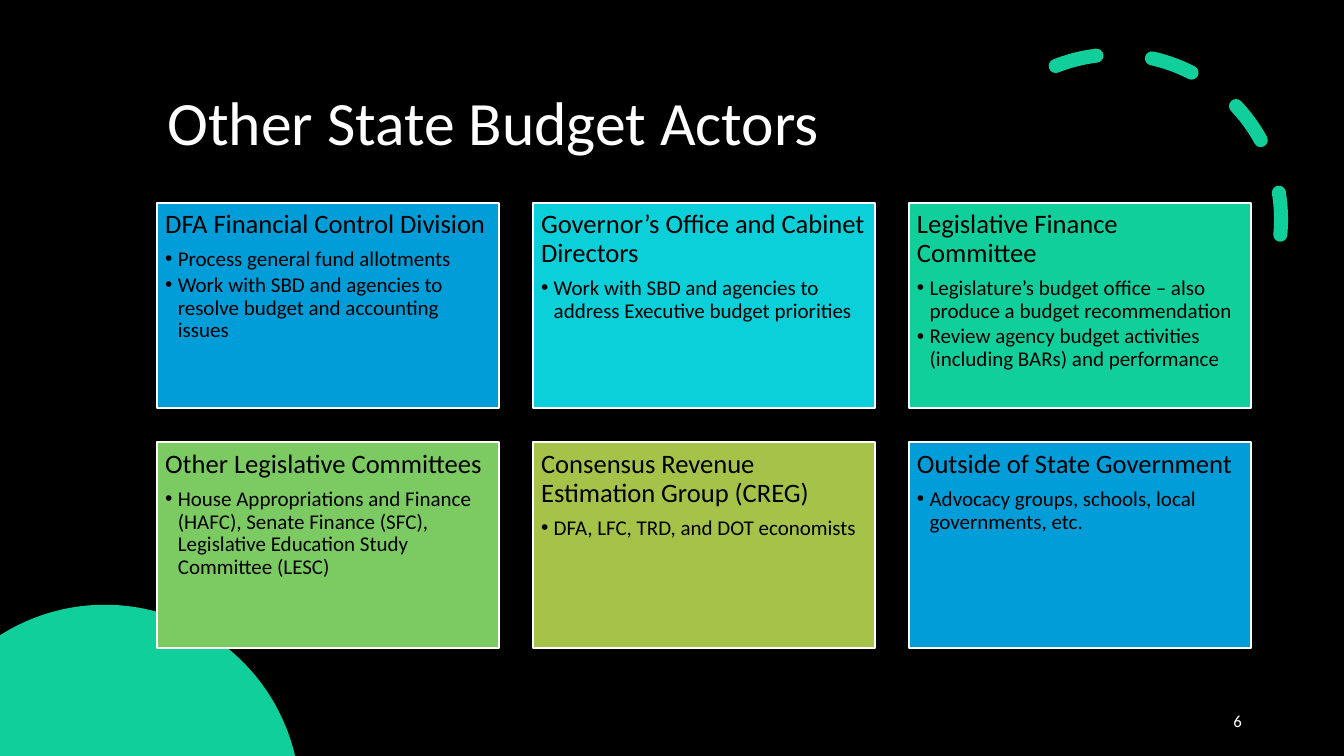
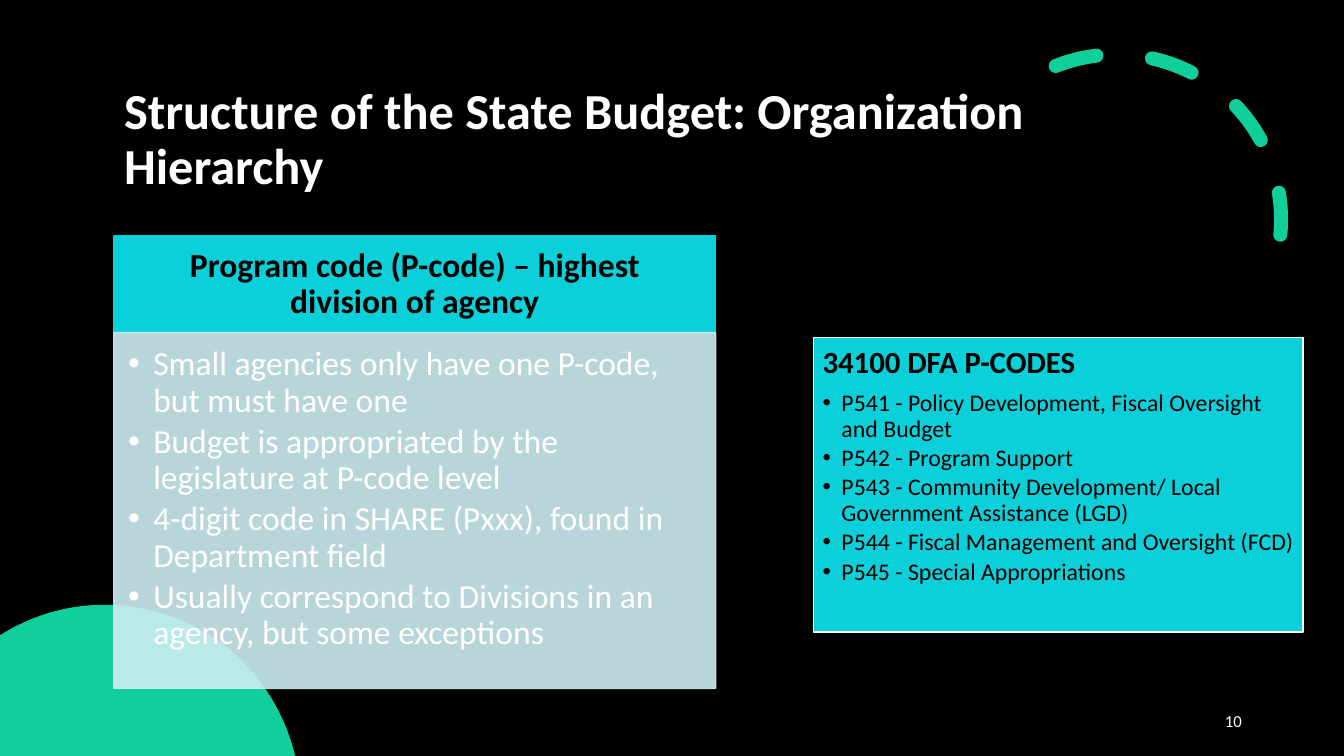
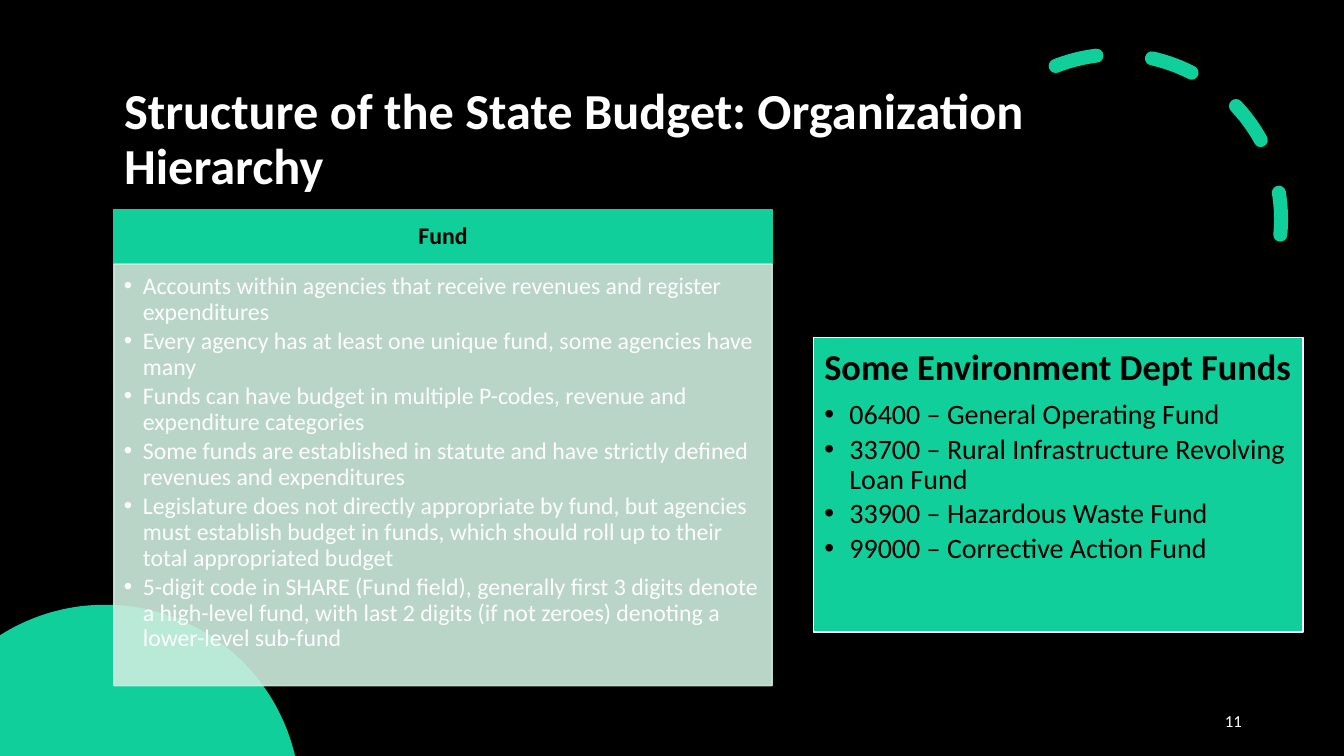
from dataclasses import dataclass
from math import acos, asin, cos, sin
from typing import Any

from lxml.etree import SubElement
from pptx import Presentation
from pptx.dml.color import RGBColor
from pptx.enum.dml import MSO_LINE_DASH_STYLE as Dash
from pptx.enum.shapes import MSO_SHAPE as Preset
from pptx.enum.text import MSO_ANCHOR as Anchor, MSO_AUTO_SIZE as AutoSize, PP_ALIGN as Align
from pptx.oxml.ns import qn
from pptx.util import Pt

COLOURS = {
    "black": "000000",
    "white": "FFFFFF",
    "blue": "009DD9",
    "cyan": "0BD0D9",
    "mint": "10CF9B",
    "green": "7CCA62",
    "olive": "A5C249",
    "pale cyan": "CCEEF1",
    "pale mint": "CCEDDE",
}
FONT = "Calibri"
WIDTH, HEIGHT = 960, 540
BULLET_INDENTS = {15: 9, 17: 13.5, 20: 18, 24: 18}
TITLE_ONLY = 5


@dataclass(frozen=True)
class Area:
    left: float
    top: float
    width: float
    height: float

    def lengths(self) -> tuple[Pt, Pt, Pt, Pt]:
        return Pt(self.left), Pt(self.top), Pt(self.width), Pt(self.height)


@dataclass(frozen=True)
class TitleStyle:
    area: Area
    size: float
    bold: bool


@dataclass(frozen=True)
class Card:
    """A filled box with a heading and bullets below it."""
    heading: str
    bullets: tuple[str, ...]
    colour: str
    heading_size: float
    bullet_size: float
    bold: bool = False
    line_width: float = 1


@dataclass(frozen=True)
class Panel:
    """A header band above a translucent box of bullets."""
    heading: str
    bullets: tuple[str, ...]
    header: Area
    body_height: float
    size: float
    colour: str
    body_colour: str


@dataclass(frozen=True)
class HierarchySlide:
    number: int
    panel: Panel
    example: Card


GRID_TITLE = TitleStyle(Area(112.3, 37.4, 781.2, 104.4), 44, False)
HIERARCHY_TITLE = TitleStyle(Area(81.4, 48.2, 791.3, 104.4), 36, True)
FIRST_CARD = Area(112.3, 144.7, 244.1, 146.9)
CARD_GAP = 24.4
GRID_COLUMNS = 3
EXAMPLE_AREA = Area(581, 241.2, 349.9, 210.2)
NUMBER_AREA = Area(678.2, 500.5, 216, 28.75)
ARC_AREA = Area(679.7, 38.9, 235.4, 235.4)

ACTORS = [
    ("blue", "DFA Financial Control Division",
     ("Process general fund allotments",
      "Work with SBD and agencies to resolve budget and accounting issues")),
    ("cyan", "Governor’s Office and Cabinet Directors",
     ("Work with SBD and agencies to address Executive budget priorities",)),
    ("mint", "Legislative Finance Committee",
     ("Legislature’s budget office – also produce a budget recommendation",
      "Review agency budget activities (including BARs) and performance")),
    ("green", "Other Legislative Committees",
     ("House Appropriations and Finance (HAFC), Senate Finance (SFC), "
      "Legislative Education Study Committee (LESC)",)),
    ("olive", "Consensus Revenue Estimation Group (CREG)",
     ("DFA, LFC, TRD, and DOT economists",)),
    ("blue", "Outside of State Government",
     ("Advocacy groups, schools, local governments, etc.",)),
]

HIERARCHY_SLIDES = [
    HierarchySlide(
        10,
        Panel(
            "Program code (P-code) – highest division of agency",
            ("Small agencies only have one P-code, but must have one",
             "Budget is appropriated by the legislature at P-code level",
             "4-digit code in SHARE (Pxxx), found in Department field",
             "Usually correspond to Divisions in an agency, but some exceptions"),
            Area(81.4, 168.5, 429.8, 69.1), 254.2, 24, "cyan", "pale cyan"),
        Card(
            "34100 DFA P-CODES",
            ("P541 - Policy Development, Fiscal Oversight and Budget",
             "P542 - Program Support",
             "P543 - Community Development/ Local Government Assistance (LGD)",
             "P544 - Fiscal Management and Oversight (FCD)",
             "P545 - Special Appropriations"),
            "cyan", 22, 17, bold=True)),
    HierarchySlide(
        11,
        Panel(
            "Fund",
            ("Accounts within agencies that receive revenues and register expenditures",
             "Every agency has at least one unique fund, some agencies have many",
             "Funds can have budget in multiple P-codes, revenue and expenditure categories",
             "Some funds are established in statute and have strictly defined "
             "revenues and expenditures",
             "Legislature does not directly appropriate by fund, but agencies must establish "
             "budget in funds, which should roll up to their total appropriated budget",
             "5-digit code in SHARE (Fund field), generally first 3 digits denote a high-level "
             "fund, with last 2 digits (if not zeroes) denoting a lower-level sub-fund"),
            Area(81.4, 149.8, 470.2, 38.9), 301, 17, "mint", "pale mint"),
        Card(
            "Some Environment Dept Funds",
            ("06400 – General Operating Fund",
             "33700 – Rural Infrastructure Revolving Loan Fund",
             "33900 – Hazardous Waste Fund",
             "99000 – Corrective Action Fund"),
            "mint", 26, 20, bold=True)),
]


def rgb(name: str) -> RGBColor:
    return RGBColor.from_string(COLOURS[name])


def set_values(target: Any, values: dict[str, Any]) -> None:
    for name, value in values.items():
        setattr(target, name, value)


def set_frame(frame: Any, anchor: Anchor, insets: tuple[float, ...] = (7.2, 3.6, 7.2, 3.6)) -> None:
    """Insets run left, top, right, bottom."""
    sides = ("margin_left", "margin_top", "margin_right", "margin_bottom")
    set_values(frame, {"word_wrap": True, "auto_size": AutoSize.NONE, "vertical_anchor": anchor})
    set_values(frame, {side: Pt(round(inset, 2)) for side, inset in zip(sides, insets)})


def write(paragraph: Any, text: str, size: float, colour: str, bold: bool = False,
          align: Align = Align.LEFT, after: float = 0, spacing: float = 0.9) -> None:
    """Fill a paragraph; after is the space below as a share of the text size."""
    run = paragraph.add_run()
    run.text = text
    set_values(run.font, {"name": FONT, "size": Pt(size), "bold": bold})
    run.font.color.rgb = rgb(colour)
    set_values(paragraph, {"alignment": align, "line_spacing": spacing,
                           "space_before": Pt(0), "space_after": Pt(round(size * after, 2))})


def write_bullets(frame: Any, bullets: tuple[str, ...], size: float, colour: str) -> None:
    for text in bullets:
        last = frame.paragraphs[-1]
        paragraph = frame.add_paragraph() if last.runs else last
        write(paragraph, text, size, colour, after=0.15)
        paragraph.level = 1
        properties = paragraph._p.get_or_add_pPr()
        indent = Pt(BULLET_INDENTS[size])
        properties.set("marL", str(indent))
        properties.set("indent", str(-indent))
        SubElement(properties, qn("a:buFont"), typeface="Arial")
        SubElement(properties, qn("a:buChar"), char="•")


def add_box(slide: Any, area: Area, fill: str, line: str, line_width: float = 1) -> Any:
    shape = slide.shapes.add_shape(Preset.RECTANGLE, *area.lengths())
    shape.shadow.inherit = False
    shape.fill.solid()
    shape.fill.fore_color.rgb = rgb(fill)
    shape.line.color.rgb = rgb(line)
    shape.line.width = Pt(line_width)
    return shape


def add_card(slide: Any, area: Area, card: Card) -> None:
    frame = add_box(slide, area, card.colour, "white", card.line_width).text_frame
    set_frame(frame, Anchor.TOP, (card.heading_size * 0.3,) * 4)
    write(frame.paragraphs[0], card.heading, card.heading_size, "black", card.bold, after=0.35)
    write_bullets(frame, card.bullets, card.bullet_size, "black")


def add_panel(slide: Any, panel: Panel) -> None:
    header, size = panel.header, panel.size
    frame = add_box(slide, header, panel.colour, panel.colour).text_frame
    set_frame(frame, Anchor.MIDDLE, (size * 0.56, size * 0.32) * 2)
    write(frame.paragraphs[0], panel.heading, size, "black", True, Align.CENTER)

    body_area = Area(header.left, header.top + header.height, header.width, panel.body_height)
    body = add_box(slide, body_area, panel.body_colour, panel.body_colour)
    for colour in list(body.element.spPr.iter(qn("a:srgbClr"))):
        SubElement(colour, qn("a:alpha"), val="90000")
    set_frame(body.text_frame, Anchor.TOP, (size * 0.42, size * 0.42, size * 0.56, size * 0.64))
    write_bullets(body.text_frame, panel.bullets, size, "white")


def add_dashed_arc(slide: Any) -> None:
    arc = slide.shapes.add_shape(Preset.ARC, *ARC_AREA.lengths())
    arc.shadow.inherit = False
    arc.adjustments[0], arc.adjustments[1] = 144.42, 0
    arc.rotation = 66.1
    arc.element.spPr.xfrm.set("flipH", "1")
    arc.fill.background()
    arc.line.color.rgb = rgb("mint")
    set_values(arc.line, {"width": Pt(10), "dash_style": Dash.DASH})
    arc.element.spPr.find(qn("a:ln")).set("cap", "rnd")


def add_corner_disc(slide: Any) -> None:
    """Draw the part of a disc that lies inside the bottom left corner."""
    centre_x, centre_y, radius, steps = 74.9, 571.5, 139.5, 60
    start = asin(-centre_x / radius)
    end = acos((centre_y - HEIGHT) / radius)
    angles = [start + (end - start) * step / steps for step in range(steps + 1)]
    points = [(Pt(centre_x + radius * sin(angle)), Pt(centre_y - radius * cos(angle)))
              for angle in angles]
    builder = slide.shapes.build_freeform(Pt(0), Pt(HEIGHT))
    builder.add_line_segments(points, close=True)
    disc = builder.convert_to_shape()
    disc.shadow.inherit = False
    disc.fill.solid()
    disc.fill.fore_color.rgb = rgb("mint")
    disc.line.fill.background()


def start_slide(presentation: Any, title: str, style: TitleStyle, number: int) -> Any:
    """Add a slide with everything that all slides share."""
    slide = presentation.slides.add_slide(presentation.slide_layouts[TITLE_ONLY])
    placeholder = slide.shapes.title
    set_values(placeholder, dict(zip(("left", "top", "width", "height"), style.area.lengths())))
    set_frame(placeholder.text_frame, Anchor.MIDDLE)
    write(placeholder.text_frame.paragraphs[0], title, style.size, "white", style.bold)
    add_dashed_arc(slide)
    add_corner_disc(slide)
    frame = slide.shapes.add_textbox(*NUMBER_AREA.lengths()).text_frame
    set_frame(frame, Anchor.MIDDLE)
    write(frame.paragraphs[0], str(number), 12, "white", align=Align.RIGHT, spacing=1.0)
    return slide


def build_actors_slide(presentation: Any) -> None:
    slide = start_slide(presentation, "Other State Budget Actors", GRID_TITLE, 6)
    for index, (colour, heading, bullets) in enumerate(ACTORS):
        row, column = divmod(index, GRID_COLUMNS)
        area = Area(FIRST_CARD.left + column * (FIRST_CARD.width + CARD_GAP),
                    FIRST_CARD.top + row * (FIRST_CARD.height + CARD_GAP),
                    FIRST_CARD.width, FIRST_CARD.height)
        add_card(slide, area, Card(heading, bullets, colour, 19, 15, line_width=1.5))


def build_hierarchy_slide(presentation: Any, content: HierarchySlide) -> None:
    slide = start_slide(presentation, "Structure of the State Budget: Organization Hierarchy",
                        HIERARCHY_TITLE, content.number)
    add_panel(slide, content.panel)
    add_card(slide, EXAMPLE_AREA, content.example)


def main() -> None:
    presentation = Presentation()
    set_values(presentation, {"slide_width": Pt(WIDTH), "slide_height": Pt(HEIGHT)})
    background = presentation.slide_master.background.fill
    background.solid()
    background.fore_color.rgb = rgb("black")
    build_actors_slide(presentation)
    for content in HIERARCHY_SLIDES:
        build_hierarchy_slide(presentation, content)
    presentation.save("out.pptx")


if __name__ == "__main__":
    main()
